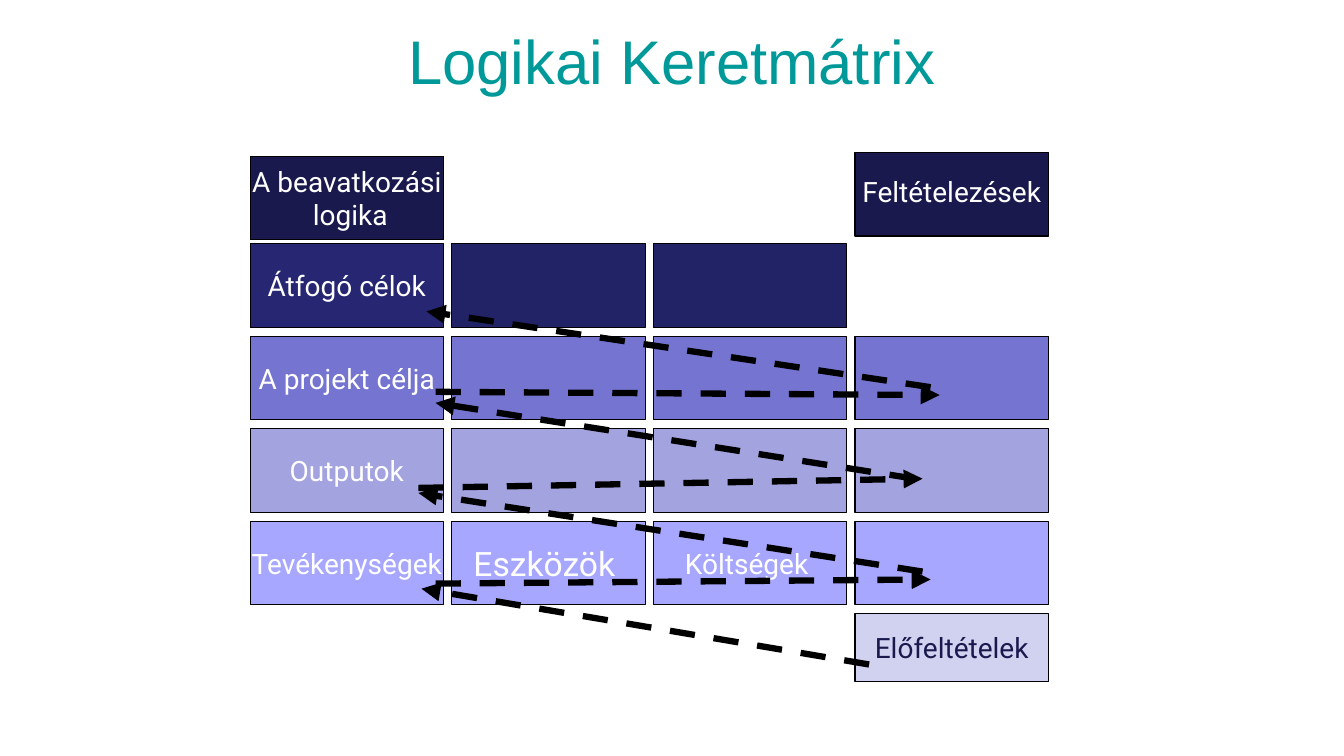
from lxml.etree import SubElement
from pptx import Presentation
from pptx.dml.color import RGBColor
from pptx.enum.dml import MSO_LINE
from pptx.enum.shapes import MSO_CONNECTOR, MSO_SHAPE
from pptx.enum.text import MSO_ANCHOR, PP_ALIGN
from pptx.oxml.ns import qn
from pptx.util import Inches, Pt

COLORS = {
    "title": "009999", "head": "19194D", "goal": "262673", "proof": "222267",
    "aim": "7575D1", "output": "A3A3E0", "task": "A7A7FF", "base": "D1D1F0",
    "white": "FFFFFF", "black": "000000",
}
WIDE, HIGH = 13.33, 7.5
GRID = (2.48, 2.42, 2, 0.917)  # left, top, column step, row step
CELL = (1.92, 0.83)

# column, row, fill, text
CELLS = [
    (0, -0.95, "head", "A beavatkozási\n logika"),
    (0, 0, "goal", "Átfogó célok"),
    (1, 0, "proof", ""),
    (2, 0, "proof", ""),
    (0, 1, "aim", "A projekt célja"),
    (0, 2, "output", "Outputok"),
    (0, 3, "task", "Tevékenységek"),
    (2, 3, "task", "Költségek "),
] + [(col, row, fill, "") for row, fill in enumerate(("aim", "output"), 1)
     for col in (1, 2, 3)] + [(3, 3, "task", "")]

# start and end of each arrow, in columns and rows of the grid
ARROWS = [
    (0.92, 3.675, 3.375, 3.63),
    (0.835, 2.64, 3.335, 2.54),
    (0.92, 1.6, 3.42, 1.635),
    (3.07, 4.55, 0.85, 3.73),
    (3.335, 3.545, 0.835, 2.695),
    (3.295, 2.54, 0.92, 1.72),
    (3.375, 1.55, 0.875, 0.73),
]


def color(name):
    return RGBColor.from_string(COLORS[name])


def write(frame, text, size=20, font="Roboto", ink="white", space=None):
    frame.vertical_anchor = MSO_ANCHOR.MIDDLE
    frame.text = text
    for para in frame.paragraphs:
        para.alignment = PP_ALIGN.CENTER
        para.line_spacing = space
        para.font.size = Pt(size)
        para.font.name = font
        para.font.color.rgb = color(ink)


def spot(grid, col, row):
    left, top, wide, high = grid
    return Inches(left + col * wide), Inches(top + row * high)


def cell(slide, grid, col, row, fill, text, high=CELL[1], **style):
    box = slide.shapes.add_shape(MSO_SHAPE.RECTANGLE, *spot(grid, col, row),
                                 Inches(CELL[0]), Inches(high))
    box.shadow.inherit = False
    box.fill.solid()
    box.fill.fore_color.rgb = color(fill)
    box.line.color.rgb = color("black")
    box.line.width = Pt(0.75)
    if text:
        box.text_frame.word_wrap = False
        write(box.text_frame, text, **style)


def arrow(slide, grid, col, row, to_col, to_row):
    link = slide.shapes.add_connector(
        MSO_CONNECTOR.STRAIGHT, *spot(grid, col, row), *spot(grid, to_col, to_row))
    link.line.color.rgb = color("black")
    link.line.width = Pt(4.5)
    link.line.dash_style = MSO_LINE.DASH
    SubElement(link.line._get_or_add_ln(), qn("a:tailEnd"), type="triangle")
    SubElement(link._element.spPr, qn("a:effectLst"))


def heading(slide, left, top, wide, high):
    title = slide.shapes.title
    title.left, title.top = Inches(left), Inches(top)
    title.width, title.height = Inches(wide), Inches(high)
    write(title.text_frame, "Logikai Keretmátrix", size=44, font="Arial", ink="title")


def matrix(slide, grid):
    for item in CELLS:
        cell(slide, grid, *item)
    cell(slide, grid, 1, 3, "task", "Eszközök ", size=24)
    cell(slide, grid, 3, -0.99, "head", "Feltételezések", space=0.8)
    cell(slide, grid, 3, 4, "base", "Előfeltételek", high=0.67, ink="head")
    for ends in ARROWS:
        arrow(slide, grid, *ends)


def main():
    deck = Presentation()
    deck.slide_width, deck.slide_height = Inches(WIDE), Inches(HIGH)
    slide = deck.slides.add_slide(deck.slide_layouts[5])
    heading(slide, WIDE * 0.05, HIGH * 0.04, WIDE * 0.9, 0.58)
    matrix(slide, GRID)
    deck.save("out.pptx")


if __name__ == "__main__":
    main()
